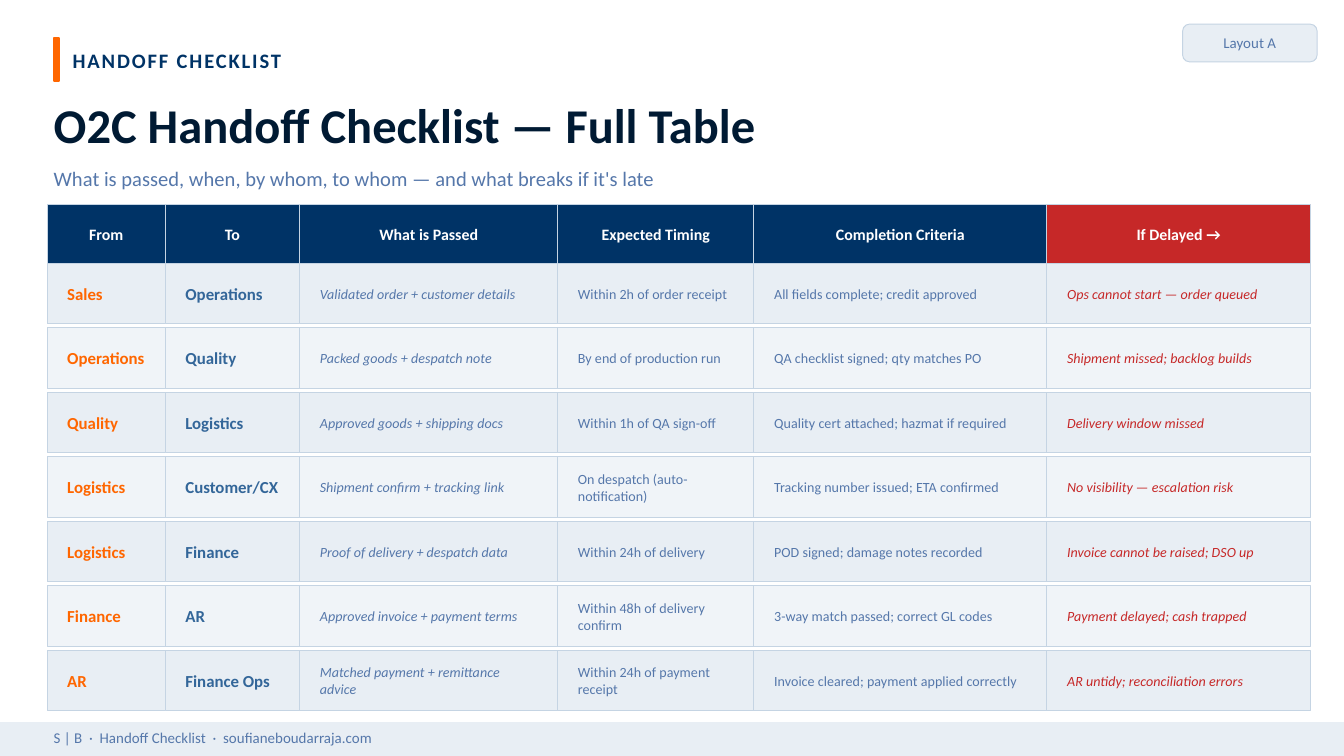
from collections import namedtuple
from itertools import accumulate

from pptx import Presentation
from pptx.dml.color import RGBColor
from pptx.enum.shapes import MSO_SHAPE
from pptx.enum.text import MSO_ANCHOR, PP_ALIGN
from pptx.util import Inches, Pt

NAVY = RGBColor(0x00, 0x33, 0x66)
INK = RGBColor(0x00, 0x1A, 0x33)
STEEL = RGBColor(0x33, 0x66, 0x99)
SLATE = RGBColor(0x55, 0x77, 0xAA)
ORANGE = RGBColor(0xFF, 0x66, 0x00)
RED = RGBColor(0xC6, 0x28, 0x28)
WHITE = RGBColor(0xFF, 0xFF, 0xFF)
MIST = RGBColor(0xE8, 0xEE, 0xF4)
PALE = RGBColor(0xF0, 0xF4, 0xF8)
BORDER = RGBColor(0xC5, 0xD4, 0xE3)

GRID_COLS, GRID_ROWS = 1000, 562.5
UNIT = Inches(10) // GRID_COLS

Box = namedtuple("Box", "x y w h")
Style = namedtuple("Style", "size color bold italic", defaults=(False, False))
Column = namedtuple("Column", "title width fill style")

COLUMNS = [
    Column("From", 88, NAVY, Style(9, ORANGE, bold=True)),
    Column("To", 100, NAVY, Style(9, STEEL, bold=True)),
    Column("What is Passed", 192, NAVY, Style(7.5, SLATE, italic=True)),
    Column("Expected Timing", 146, NAVY, Style(7.5, SLATE)),
    Column("Completion Criteria", 218, NAVY, Style(7.5, SLATE)),
    Column("If Delayed →", 196, RED, Style(7.5, RED, italic=True)),
]
HANDOFFS = [
    ("Sales", "Operations", "Validated order + customer details",
     "Within 2h of order receipt", "All fields complete; credit approved",
     "Ops cannot start — order queued"),
    ("Operations", "Quality", "Packed goods + despatch note",
     "By end of production run", "QA checklist signed; qty matches PO",
     "Shipment missed; backlog builds"),
    ("Quality", "Logistics", "Approved goods + shipping docs",
     "Within 1h of QA sign-off", "Quality cert attached; hazmat if required",
     "Delivery window missed"),
    ("Logistics", "Customer/CX", "Shipment confirm + tracking link",
     "On despatch (auto-notification)", "Tracking number issued; ETA confirmed",
     "No visibility — escalation risk"),
    ("Logistics", "Finance", "Proof of delivery + despatch data",
     "Within 24h of delivery", "POD signed; damage notes recorded",
     "Invoice cannot be raised; DSO up"),
    ("Finance", "AR", "Approved invoice + payment terms",
     "Within 48h of delivery confirm", "3-way match passed; correct GL codes",
     "Payment delayed; cash trapped"),
    ("AR", "Finance Ops", "Matched payment + remittance advice",
     "Within 24h of payment receipt", "Invoice cleared; payment applied correctly",
     "AR untidy; reconciliation errors"),
]


def place(box):
    """Convert a box in grid units to slide lengths."""
    return [int(n * UNIT) for n in box]


def write(sp, text, style, align=PP_ALIGN.LEFT, inset=(0, 0)):
    """Set one vertically centred paragraph inside a shape."""
    tf = sp.text_frame
    tf.word_wrap = True
    tf.vertical_anchor = MSO_ANCHOR.MIDDLE
    tf.margin_left = tf.margin_right = inset[0] * UNIT
    tf.margin_top = tf.margin_bottom = inset[1] * UNIT
    p = tf.paragraphs[0]
    p.text = text
    p.alignment = align
    p.font.name = "Calibri"
    p.font.size = Pt(style.size)
    p.font.bold = style.bold
    p.font.italic = style.italic
    p.font.color.rgb = style.color
    return p


def add_panel(s, box, fill, line, width=0.5, kind=MSO_SHAPE.RECTANGLE):
    """Add a filled, outlined shape without a shadow."""
    sp = s.shapes.add_shape(kind, *place(box))
    sp.shadow.inherit = False
    sp.fill.solid()
    sp.fill.fore_color.rgb = fill
    sp.line.color.rgb = line
    sp.line.width = Pt(width)
    return sp


def add_label(s, box, text, style):
    """Add a text box without margins."""
    return write(s.shapes.add_textbox(*place(box)), text, style)


def add_heading(s, box):
    """Place the accent bar, section name, title and subtitle."""
    add_panel(s, Box(box.x, box.y + 1, 4, 32), ORANGE, ORANGE, 1)
    p = add_label(s, Box(box.x + 14, box.y, 700, 35),
                  "HANDOFF CHECKLIST", Style(11, NAVY, bold=True))
    p.runs[0]._r.get_or_add_rPr().set("spc", "100")
    add_label(s, Box(box.x, box.y + 38, box.w, 55),
              "O2C Handoff Checklist — Full Table", Style(26, INK, bold=True))
    add_label(s, Box(box.x, box.y + 91, box.w, 30),
              "What is passed, when, by whom, to whom — and what breaks if it's late",
              Style(11, SLATE))


def add_badge(s, box):
    """Place the rounded layout tag."""
    sp = add_panel(s, box, MIST, BORDER, kind=MSO_SHAPE.ROUNDED_RECTANGLE)
    sp.adjustments[0] = 0.18
    write(sp, "Layout A", Style(8, SLATE), PP_ALIGN.CENTER)


def add_footer(s, box):
    """Place the footer band and its text."""
    add_panel(s, box, MIST, MIST, 1)
    add_label(s, Box(box.x + 40, box.y + 1, box.w - 80, 20),
              "S | B  ·  Handoff Checklist  ·  soufianeboudarraja.com", Style(8, SLATE))


def add_checklist(s, box, header=44, gap=3):
    """Place the header cells and the separated handoff rows."""
    pitch = (box.h - header + gap) // len(HANDOFFS)
    lefts = accumulate((c.width for c in COLUMNS), initial=box.x)
    for i, (col, x) in enumerate(zip(COLUMNS, lefts)):
        sp = add_panel(s, Box(x, box.y, col.width, header), col.fill, BORDER)
        write(sp, col.title, Style(8.5, WHITE, bold=True), PP_ALIGN.CENTER, (10, 5))
        for j, handoff in enumerate(HANDOFFS):
            cell = Box(x, box.y + header + j * pitch, col.width, pitch - gap)
            sp = add_panel(s, cell, PALE if j % 2 else MIST, BORDER)
            write(sp, handoff[i], col.style, inset=(15, 7))


def main():
    """Build and save the slide."""
    prs = Presentation()
    prs.slide_width, prs.slide_height = place((GRID_COLS, GRID_ROWS))
    s = prs.slides.add_slide(prs.slide_layouts[6])
    add_heading(s, Box(40, 27, 920, 121))
    add_badge(s, Box(880, 18, 100, 28))
    add_footer(s, Box(0, 538, GRID_COLS, GRID_ROWS - 538))
    add_checklist(s, Box(35, 152, 940, 377))
    prs.save("out.pptx")


if __name__ == "__main__":
    main()
